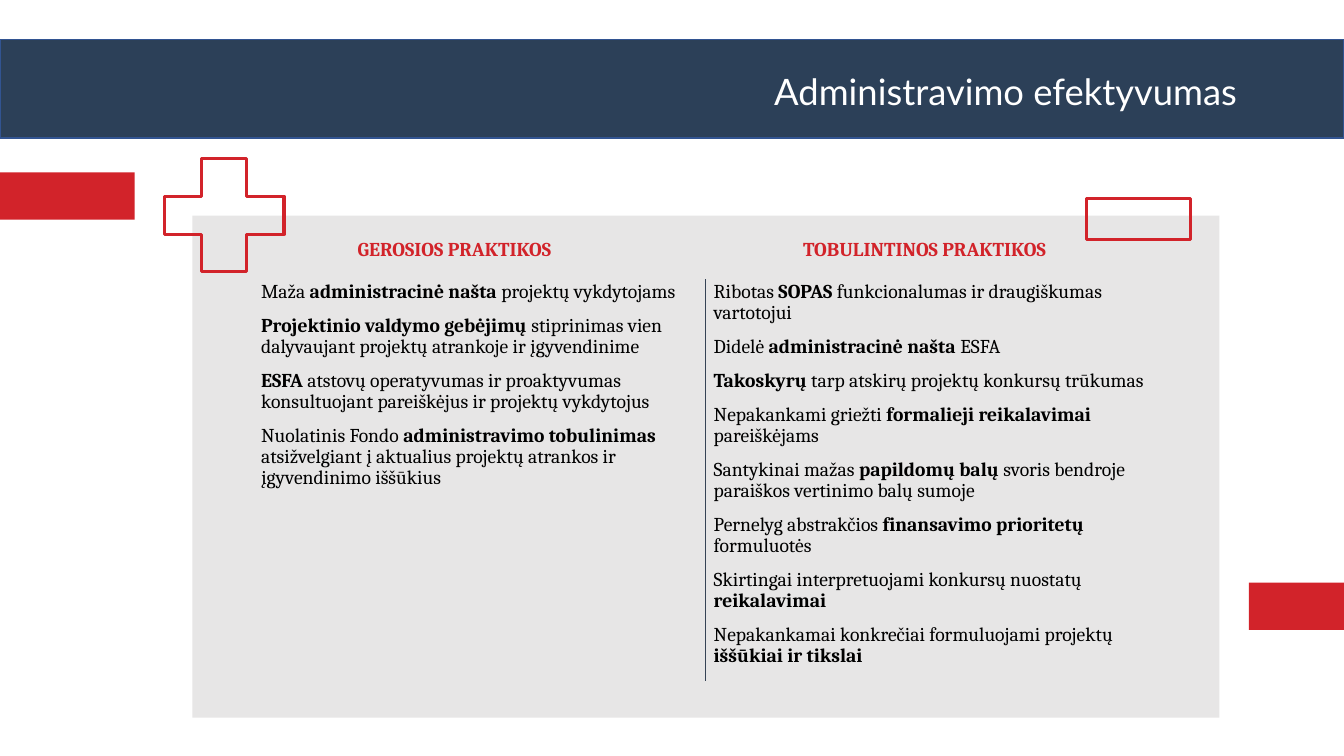
from pptx import Presentation
from pptx.dml.color import RGBColor
from pptx.enum.shapes import MSO_CONNECTOR as CONN, MSO_SHAPE as SHAPE
from pptx.enum.text import MSO_ANCHOR as ANCHOR, MSO_AUTO_SIZE as FIT, PP_ALIGN as ALIGN
from pptx.oxml.ns import qn
from pptx.util import Pt
from lxml.etree import SubElement

NAVY = RGBColor(0x2C, 0x40, 0x58)
BLUE = RGBColor(0x32, 0x54, 0x91)
SLATE = RGBColor(0x36, 0x43, 0x55)
RED = RGBColor(0xD2, 0x23, 0x2A)
GREY = RGBColor(0xE7, 0xE6, 0xE6)
WHITE = RGBColor(0xFF, 0xFF, 0xFF)
BLACK = RGBColor(0, 0, 0)

# Text between ** marks is bold
GOOD = [
    "Maža **administracinė našta **projektų vykdytojams",
    "**Projektinio valdymo gebėjimų **stiprinimas vien dalyvaujant projektų atrankoje ir įgyvendinime",
    "**ESFA** atstovų operatyvumas ir proaktyvumas konsultuojant pareiškėjus ir projektų vykdytojus",
    "Nuolatinis Fondo **administravimo tobulinimas **atsižvelgiant į aktualius projektų atrankos"
    " ir įgyvendinimo iššūkius",
]
TO_IMPROVE = [
    "Ribotas **SOPAS** funkcionalumas ir draugiškumas vartotojui",
    "Didelė **administracinė našta **ESFA",
    "**Takoskyrų **tarp atskirų projektų konkursų trūkumas",
    "Nepakankami griežti **formalieji reikalavimai **pareiškėjams",
    "Santykinai mažas **papildomų balų **svoris bendroje paraiškos vertinimo balų sumoje",
    "Pernelyg abstrakčios **finansavimo prioritetų **formuluotės",
    "Skirtingai interpretuojami konkursų nuostatų **reikalavimai**",
    "Nepakankamai konkrečiai formuluojami projektų **iššūkiai ir tikslai**",
]


def place(sp, x, y, w, h):
    sp.left, sp.top, sp.width, sp.height = Pt(x), Pt(y), Pt(w), Pt(h)


def add_box(s, kind, x, y, w, h, fill=None, line=None, weight=1):
    sp = s.shapes.add_shape(kind, Pt(x), Pt(y), Pt(w), Pt(h))
    sp.shadow.inherit = False
    if fill is None:
        sp.fill.background()
    else:
        sp.fill.solid()
        sp.fill.fore_color.rgb = fill
    if line is None:
        sp.line.fill.background()
    else:
        sp.line.color.rgb = line
        sp.line.width = Pt(weight)
    return sp


def write(sp, paragraphs, size=14, font="Cambria", color=BLACK, align=ALIGN.LEFT,
          spacing=1.0, gap=0, inset=(7.2, 3.6)):
    tf = sp.text_frame
    tf.word_wrap = True
    tf.auto_size = FIT.NONE
    tf.vertical_anchor = ANCHOR.TOP
    tf.margin_left = tf.margin_right = Pt(inset[0])
    tf.margin_top = tf.margin_bottom = Pt(inset[1])
    for i, text in enumerate(paragraphs):
        p = tf.add_paragraph() if i else tf.paragraphs[0]
        p.alignment = align
        p.line_spacing = spacing
        p.space_before = Pt(gap if i else 0)
        for j, part in enumerate(text.split("**")):
            if part:
                r = p.add_run()
                r.text = part
                r.font.size = Pt(size)
                r.font.name = font
                r.font.bold = j % 2 == 1
                r.font.color.rgb = color


def add_text(s, x, y, w, h, paragraphs, **fmt):
    write(s.shapes.add_textbox(Pt(x), Pt(y), Pt(w), Pt(h)), paragraphs, **fmt)


def add_divider(s, x, top, bottom):
    line = s.shapes.add_connector(CONN.STRAIGHT, Pt(x), Pt(top), Pt(x), Pt(bottom))
    line.line.color.rgb = SLATE
    line.line.width = Pt(1)
    SubElement(line._element.spPr, qn("a:effectLst"))


def main():
    prs = Presentation()
    prs.slide_width, prs.slide_height = Pt(960), Pt(540)
    s = prs.slides.add_slide(prs.slide_layouts[5])

    # Title on its band
    band = add_box(s, SHAPE.RECTANGLE, 0, 28.1, 960, 70.6, NAVY, BLUE)
    title = s.shapes.title
    band._element.addnext(title._element)
    place(title, 256.3, 49, 635, 42.5)
    title.fill.solid()
    title.fill.fore_color.rgb = NAVY
    write(title, ["Administravimo efektyvumas"], size=26, font="Lato", color=WHITE,
          align=ALIGN.RIGHT, spacing=0.9)

    # Edge accents and panel
    add_box(s, SHAPE.RECTANGLE, 0, 123.1, 96.2, 33.8, RED)
    add_box(s, SHAPE.RECTANGLE, 892.1, 416.2, 67.9, 33.8, RED)
    add_box(s, SHAPE.RECTANGLE, 137.5, 154.1, 733.5, 358.5, GREY)

    # Two columns with headings
    columns = [(184.3, 248.4, "GEROSIOS PRAKTIKOS", GOOD),
               (507.6, 566.6, "TOBULINTINOS PRAKTIKOS", TO_IMPROVE)]
    for x, heading_x, heading, items in columns:
        add_text(s, x, 198.7, 316, 301, items, spacing=0.9, gap=9.1, inset=(2.2, 2.2))
        add_text(s, heading_x, 165.6, 204, 24.5, [f"**{heading}**"], color=RED)
    add_divider(s, 504, 199.4, 486.7)

    # Plus and minus signs
    plus = add_box(s, SHAPE.CROSS, 117.4, 113.5, 85.5, 80.6, line=RED, weight=2.25)
    plus.adjustments[0] = 0.33
    add_box(s, SHAPE.RECTANGLE, 776.2, 141.8, 74.5, 29.5, line=RED, weight=2.25)

    prs.save("out.pptx")


if __name__ == "__main__":
    main()
